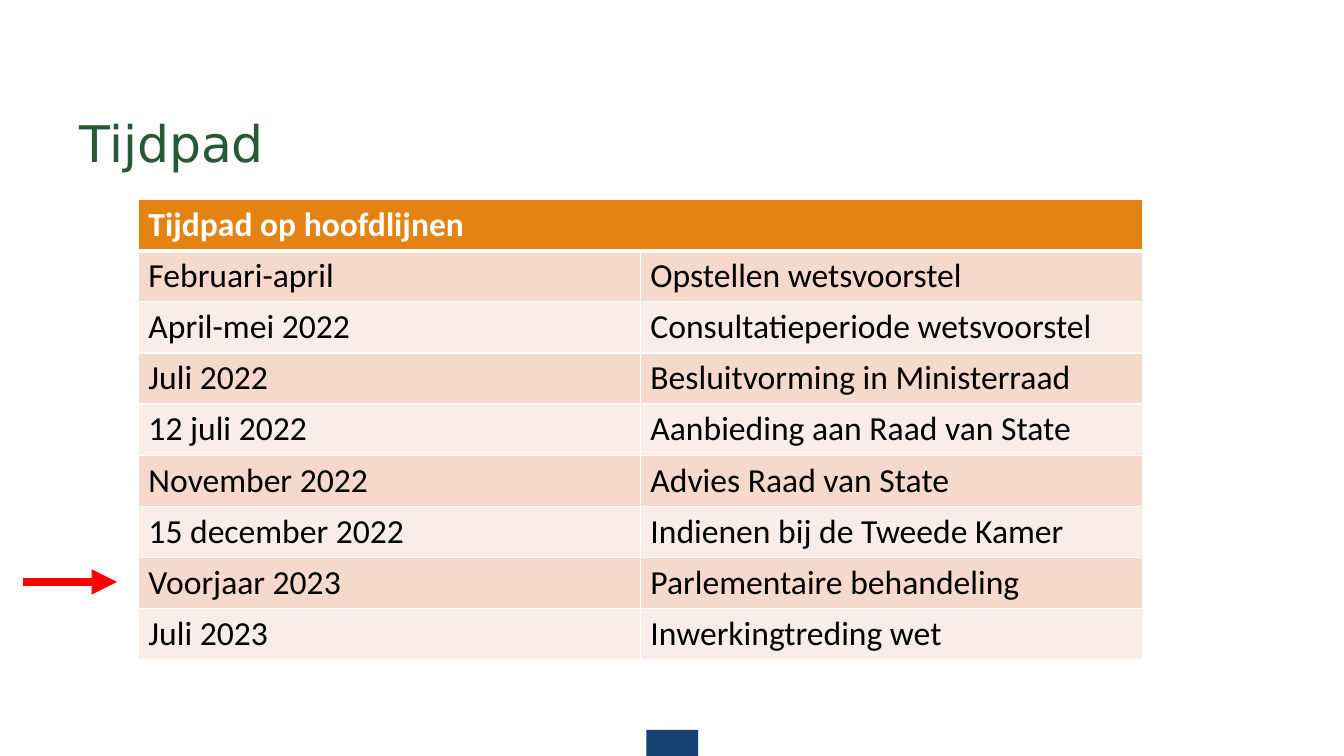
from dataclasses import dataclass

from pptx import Presentation
from pptx.dml.color import RGBColor
from pptx.enum.shapes import MSO_CONNECTOR as CONN, MSO_SHAPE as SHAPE
from pptx.enum.text import MSO_ANCHOR as ANCHOR, MSO_AUTO_SIZE as AUTOSIZE, PP_ALIGN as ALIGN
from pptx.oxml import parse_xml
from pptx.oxml.ns import nsdecls
from pptx.oxml.xmlchemy import OxmlElement
from pptx.util import Pt

EMU_PER_PX = 6096  # 150 px to the inch


def px(*lengths):
    return [n * EMU_PER_PX for n in lengths]


@dataclass(frozen=True)
class Theme:
    title_font: str = "DejaVu Sans"
    body_font: str = "Calibri"
    title_size: int = 36
    body_size: int = 24
    title: str = "275837"
    text: str = "000000"
    white: str = "FFFFFF"
    header: str = "E48312"
    bands: tuple = ("F5D9CC", "FAEDE7")
    footer: str = "154273"
    arrow: str = "FF0000"


class SlideBuilder:
    def __init__(self, slide, theme):
        self.slide = slide
        self.theme = theme

    def format(self, p, font, size, color, bold=False):
        for r in p.runs:
            r.font.name = font
            r.font.size = Pt(size)
            r.font.bold = bold
            r.font.color.rgb = RGBColor.from_string(color)

    def title(self, text, x, y, w, h):
        sp = self.slide.shapes.title
        sp.left, sp.top, sp.width, sp.height = px(x, y, w, h)
        tf = sp.text_frame
        tf.text = text
        tf.auto_size = AUTOSIZE.NONE
        tf.vertical_anchor = ANCHOR.BOTTOM
        p = tf.paragraphs[0]
        p.alignment = ALIGN.LEFT
        p.line_spacing = 0.9
        self.format(p, self.theme.title_font, self.theme.title_size, self.theme.title)

    def block(self, x, y, w, h, color):
        sp = self.slide.shapes.add_shape(SHAPE.RECTANGLE, *px(x, y, w, h))
        sp.shadow.inherit = False
        sp.fill.solid()
        sp.fill.fore_color.rgb = RGBColor.from_string(color)
        sp.line.fill.background()

    def arrow(self, x1, y1, x2, y2, color, weight):
        line = self.slide.shapes.add_connector(CONN.STRAIGHT, *px(x1, y1, x2, y2))
        line.line.color.rgb = RGBColor.from_string(color)
        line.line.width = Pt(weight)
        line.line._get_or_add_ln().append(parse_xml(f'<a:tailEnd {nsdecls("a")} type="triangle"/>'))
        line._element.spPr.append(OxmlElement("a:effectLst"))

    def borders(self, cell, **weights):
        """Draw white borders; weights in points are keyed by side: L, R, T, B."""
        tcPr = cell._tc.get_or_add_tcPr()
        for side, weight in weights.items():
            tcPr.append(parse_xml(
                f'<a:ln{side} {nsdecls("a")} w="{Pt(weight)}"><a:solidFill>'
                f'<a:srgbClr val="{self.theme.white}"/></a:solidFill></a:ln{side}>'))

    def cell(self, cell, text, row):
        theme = self.theme
        is_header = row == 0
        self.borders(cell, L=1, R=1, T=3 if row == 1 else 1, B=3 if is_header else 1)
        cell.fill.solid()
        fill = theme.header if is_header else theme.bands[(row - 1) % 2]
        cell.fill.fore_color.rgb = RGBColor.from_string(fill)
        cell.text_frame.text = text
        self.format(cell.text_frame.paragraphs[0], theme.body_font, theme.body_size,
                    theme.white if is_header else theme.text, is_header)

    def table(self, heading, rows, x, y, col_w, row_h):
        """Banded table whose heading spans all columns."""
        grid = [(heading,) + ("",) * (len(rows[0]) - 1), *rows]
        n_rows, n_cols = len(grid), len(rows[0])
        frame = self.slide.shapes.add_table(
            n_rows, n_cols, *px(x, y, col_w * n_cols, row_h * n_rows))
        table = frame.table
        for column in table.columns:
            column.width = px(col_w)[0]
        for i, texts in enumerate(grid):
            table.rows[i].height = px(row_h)[0]
            for j, text in enumerate(texts):
                self.cell(table.cell(i, j), text, i)
        table.cell(0, 0).merge(table.cell(0, n_cols - 1))


STEPS = [
    ("Februari-april", "Opstellen wetsvoorstel"),
    ("April-mei 2022", "Consultatieperiode wetsvoorstel"),
    ("Juli 2022", "Besluitvorming in Ministerraad"),
    ("12 juli 2022", "Aanbieding aan Raad van State"),
    ("November 2022", "Advies Raad van State"),
    ("15 december 2022", "Indienen bij de Tweede Kamer"),
    ("Voorjaar 2023", "Parlementaire behandeling"),
    ("Juli 2023", "Inwerkingtreding wet"),
]


def main():
    prs = Presentation()
    prs.slide_width, prs.slide_height = px(2000, 1125)
    theme = Theme()
    title_only = prs.slide_layouts[5]
    s = SlideBuilder(prs.slides.add_slide(title_only), theme)
    s.block(962, 1086, 77, 39, theme.footer)
    s.title("Tijdpad", 104, 110, 1792, 156)
    s.arrow(34, 866, 174, 866, theme.arrow, 6)
    s.table("Tijdpad op hoofdlijnen", STEPS, 206, 297, 747, 76)
    prs.save("out.pptx")


if __name__ == "__main__":
    main()
